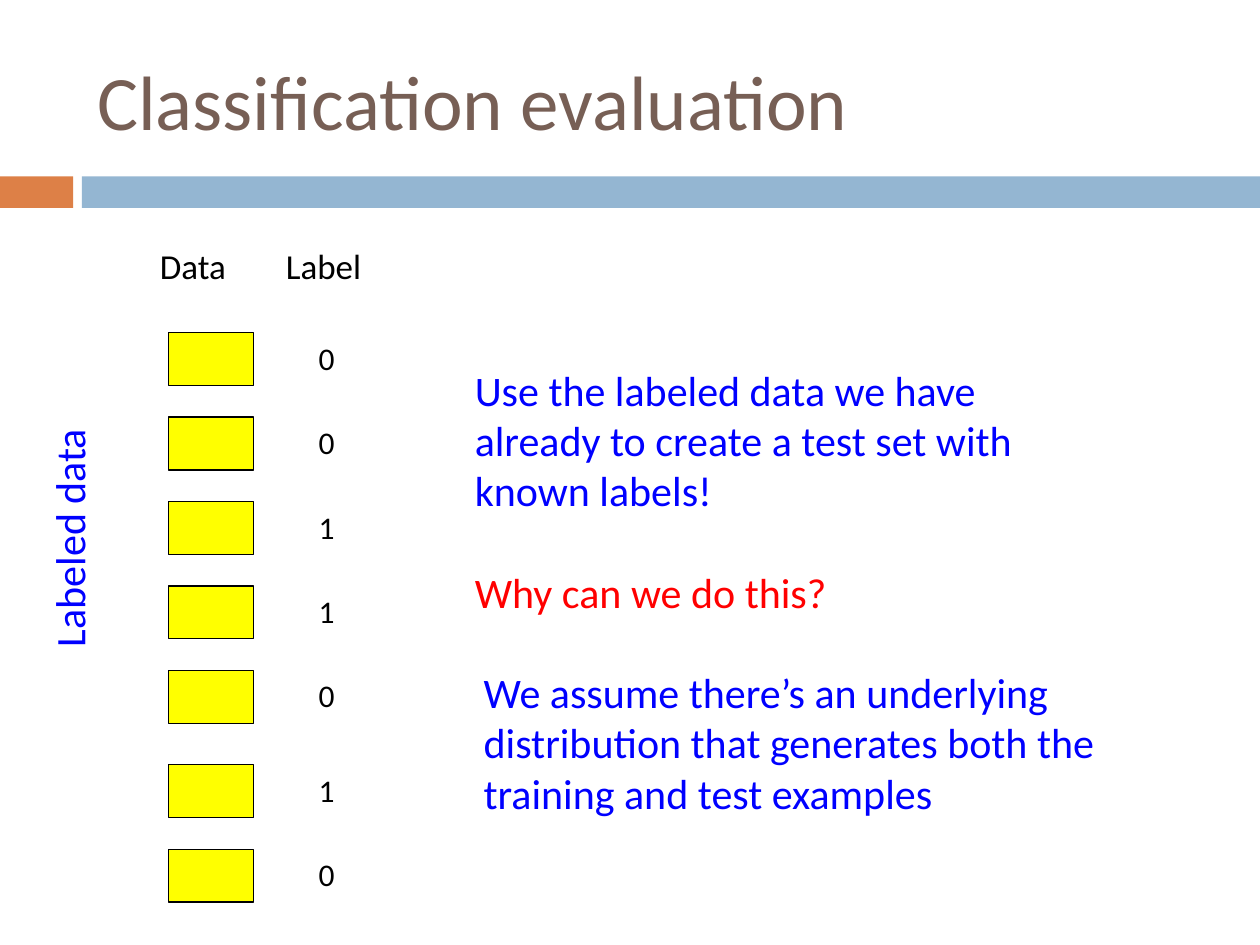
from pptx import Presentation
from pptx.dml.color import RGBColor
from pptx.enum import shapes, text
from pptx.util import Inches, Pt

THEME = {
    "font": "Calibri",
    "title": {"size": 44, "color": "775F55"},
    "header": {"size": 20, "color": "000000"},
    "label": {"size": 18, "color": "000000"},
    "note": {"size": 24, "color": "0000FF"},
    "question": {"size": 24, "color": "FF0000"},
    "accent": "DD8047",
    "band": "94B6D2",
    "example": "FFFF00",
    "outline": "000000",
}

presentation = Presentation()
presentation.slide_width, presentation.slide_height = Inches(10), Inches(7.5)
slide = presentation.slides.add_slide(presentation.slide_layouts[5])


def add_rectangle(left, top, width, height, fill, outline=None):
    shape = slide.shapes.add_shape(
        shapes.MSO_SHAPE.RECTANGLE, *map(Inches, (left, top, width, height)))
    shape.shadow.inherit = False
    shape.fill.solid()
    shape.fill.fore_color.rgb = RGBColor.from_string(fill)
    if outline:
        shape.line.color.rgb = RGBColor.from_string(outline)
        shape.line.width = Pt(0.75)
    else:
        shape.line.fill.background()


def write(shape, box, paragraphs, wrap=True, gap=0):
    """Place the shape and fill it with (wording, theme style) paragraphs."""
    for side, value in zip(("left", "top", "width", "height"), box):
        setattr(shape, side, Inches(value))
    frame = shape.text_frame
    frame.word_wrap = wrap
    for index, (wording, style) in enumerate(paragraphs):
        paragraph = frame.add_paragraph() if index else frame.paragraphs[0]
        paragraph.text = wording
        paragraph.alignment = text.PP_ALIGN.LEFT
        paragraph.space_before = Pt(gap if index else 0)
        font = paragraph.runs[0].font
        formats = {"name": THEME["font"], "size": Pt(THEME[style]["size"])}
        for name, value in formats.items():
            setattr(font, name, value)
        font.color.rgb = RGBColor.from_string(THEME[style]["color"])


# Title and the band below it
add_rectangle(0, 1.4, 0.58, 0.25, THEME["accent"])
add_rectangle(0.65, 1.4, 9.35, 0.25, THEME["band"])
write(slide.shapes.title, (0.67, 0.25, 8.92, 1.08),
      [("Classification evaluation", "title")])
slide.shapes.title.text_frame.vertical_anchor = text.MSO_ANCHOR.MIDDLE

# Labeled examples: five rows, then two more after a slightly wider gap
data_left, label_left = 1.34, 2.43
first_row, row_pitch, extra_gap = 2.64, 0.67, 0.08
for row, label in enumerate("0011010"):
    top = first_row + row * row_pitch + (extra_gap if row >= 5 else 0)
    add_rectangle(data_left, top, 0.67, 0.42, THEME["example"], THEME["outline"])
    write(slide.shapes.add_textbox(0, 0, 0, 0), (label_left, top, 0.34, 0.4),
          [(label, "label")], wrap=False)

# Column headings and the side caption
for heading, left, width in (("Data", 1.17, 0.79), ("Label", 2.17, 0.89)):
    write(slide.shapes.add_textbox(0, 0, 0, 0), (left, 1.89, width, 0.44),
          [(heading, "header")], wrap=False)

caption = slide.shapes.add_textbox(0, 0, 0, 0)
write(caption, (-0.53, 3.91, 2.15, 0.5), [("Labeled data", "note")], wrap=False)
caption.rotation = 270

# Explanation
write(slide.shapes.add_textbox(0, 0, 0, 0), (3.67, 2.84, 4.94, 2.12), [
    ("Use the labeled data we have already to create a test set with known labels!",
     "note"),
    ("Why can we do this?", "question"),
], gap=29)
write(slide.shapes.add_textbox(0, 0, 0, 0), (3.74, 5.24, 5.22, 1.31), [
    ("We assume there’s an underlying distribution that generates both the "
     "training and test examples", "note"),
])

presentation.save("out.pptx")
